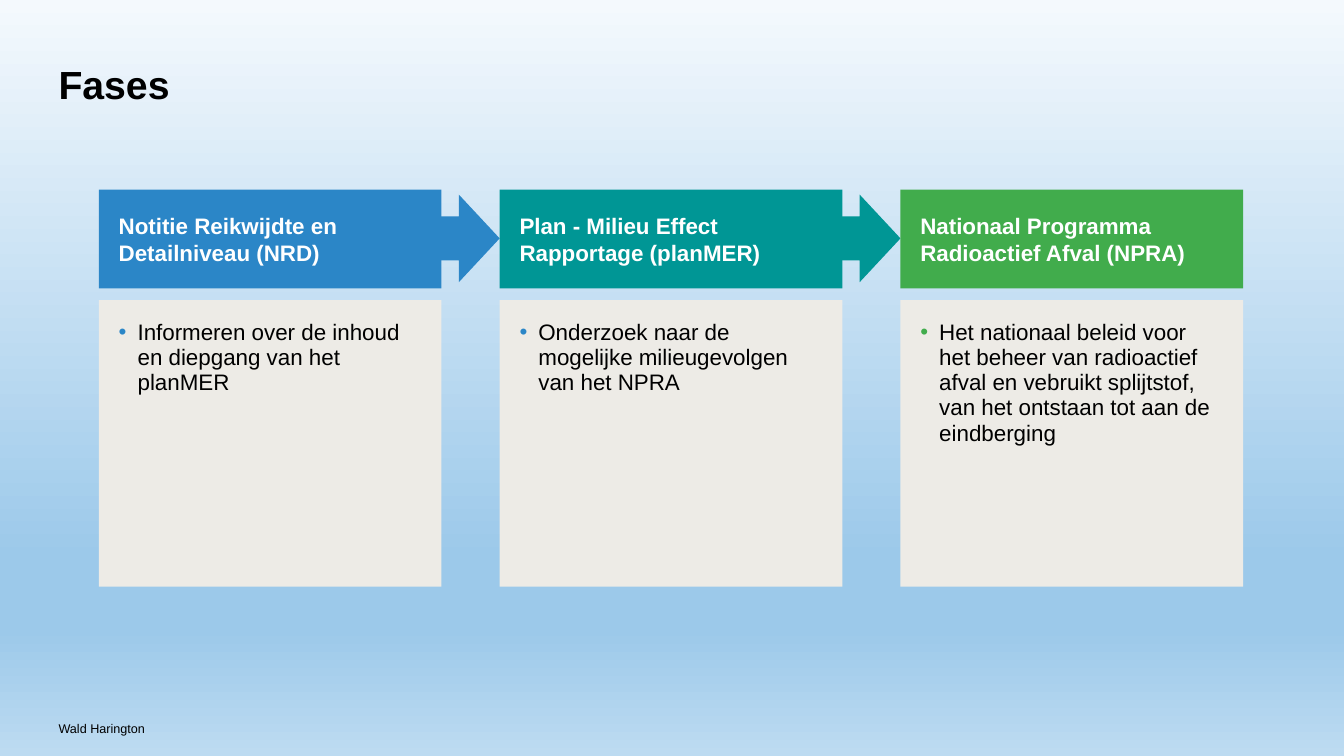
from lxml.etree import SubElement
from pptx import Presentation
from pptx.dml.color import RGBColor
from pptx.enum.shapes import MSO_SHAPE as SHAPE
from pptx.enum.text import MSO_ANCHOR as ANCHOR, PP_ALIGN as ALIGN
from pptx.oxml.ns import qn
from pptx.util import Pt

BLUE, TEAL, GREEN = "2B86C7", "009695", "41AC4C"
BLACK, WHITE, PANEL = "000000", "FFFFFF", "EDEBE6"
LEFT, PITCH, WIDTH = 70.6, 286.3, 244.8
MARGIN, ARROW_WIDTH = 41.8, 58.3
SKY = [(0, "F4F9FD"), (74, "9CC9EA"), (83, "9CC9EA"), (100, "BDDBF1")]
PHASES = [
    ("Notitie Reikwijdte en Detailniveau (NRD)", BLUE, BLUE,
     "Informeren over de inhoud en diepgang van het planMER"),
    ("Plan - Milieu Effect Rapportage (planMER)", TEAL, BLUE,
     "Onderzoek naar de mogelijke milieugevolgen van het NPRA"),
    ("Nationaal Programma Radioactief Afval (NPRA)", GREEN, GREEN,
     "Het nationaal beleid voor het beheer van radioactief afval en vebruikt "
     "splijtstof, van het ontstaan tot aan de eindberging"),
]


def rgb(value):
    return RGBColor.from_string(value)


class SlideBuilder:
    font = "Arial"

    def __init__(self, slide):
        self.s = slide

    def background(self, stops):
        fill = self.s.background.fill
        fill.gradient()
        fill.gradient_angle = 270
        gradient = self.s.element.find(".//" + qn("a:gsLst"))
        for stop in list(gradient):
            gradient.remove(stop)
        for position, color in stops:
            stop = SubElement(gradient, qn("a:gs"), pos=str(position * 1000))
            SubElement(stop, qn("a:srgbClr"), val=color)

    def shape(self, kind, x, y, w, h, color):
        sp = self.s.shapes.add_shape(kind, Pt(x), Pt(y), Pt(w), Pt(h))
        sp.shadow.inherit = False
        sp.fill.solid()
        sp.fill.fore_color.rgb = rgb(color)
        sp.line.fill.background()
        return sp

    def set_text(self, sp, text, size, color, bold=False, insets=(0, 0, 0, 0),
                 anchor=ANCHOR.TOP):
        tf = sp.text_frame
        tf.word_wrap = True
        tf.vertical_anchor = anchor
        tf.margin_left, tf.margin_top, tf.margin_right, tf.margin_bottom = map(Pt, insets)
        tf.text = text
        p = tf.paragraphs[0]
        p.alignment = ALIGN.LEFT
        font = p.runs[0].font
        font.name, font.size, font.bold = self.font, Pt(size), bold
        font.color.rgb = rgb(color)
        return p

    def label(self, text, x, y, w, h, size, bold=False, anchor=ANCHOR.TOP):
        sp = self.s.shapes.add_textbox(Pt(x), Pt(y), Pt(w), Pt(h))
        self.set_text(sp, text, size, BLACK, bold, anchor=anchor)

    def arrow(self, x, color):
        self.shape(SHAPE.RIGHT_ARROW, x, 139, ARROW_WIDTH, 62.6, color)

    def header(self, x, text, color):
        sp = self.shape(SHAPE.RECTANGLE, x, 135.4, WIDTH, 70.6, color)
        self.set_text(sp, text, 16, WHITE, True, (14.2, 7.2, 7.2, 7.2), ANCHOR.MIDDLE)

    def panel(self, x, text, bullet_color):
        sp = self.shape(SHAPE.RECTANGLE, x, 214.4, WIDTH, 204.6, PANEL)
        p = self.set_text(sp, text, 16, BLACK, insets=(14.2,) * 4)
        p.line_spacing = 0.94
        p.space_after = Pt(8)
        pPr = p._p.get_or_add_pPr()
        pPr.set("marL", str(Pt(13.5)))
        pPr.set("indent", str(-Pt(13.5)))
        color = SubElement(pPr, qn("a:buClr"))
        SubElement(color, qn("a:srgbClr"), val=bullet_color)
        SubElement(pPr, qn("a:buFont"), typeface=self.font)
        SubElement(pPr, qn("a:buChar"), char="•")


def main():
    prs = Presentation()
    prs.slide_width, prs.slide_height = Pt(960), Pt(540)
    slide = SlideBuilder(prs.slides.add_slide(prs.slide_layouts[6]))
    slide.background(SKY)
    slide.label("Wald Harington", MARGIN, 514.8, 173.5, 11.5, 9)
    for i, (title, color, bullet_color, text) in enumerate(PHASES):
        x = LEFT + i * PITCH
        if i < len(PHASES) - 1:
            slide.arrow(x + PITCH - ARROW_WIDTH, color)
        slide.header(x, title, color)
        slide.panel(x, text, bullet_color)
    slide.label("Fases", MARGIN, 41.8, 877, 36, 28, True, ANCHOR.MIDDLE)
    prs.save("out.pptx")


if __name__ == "__main__":
    main()
